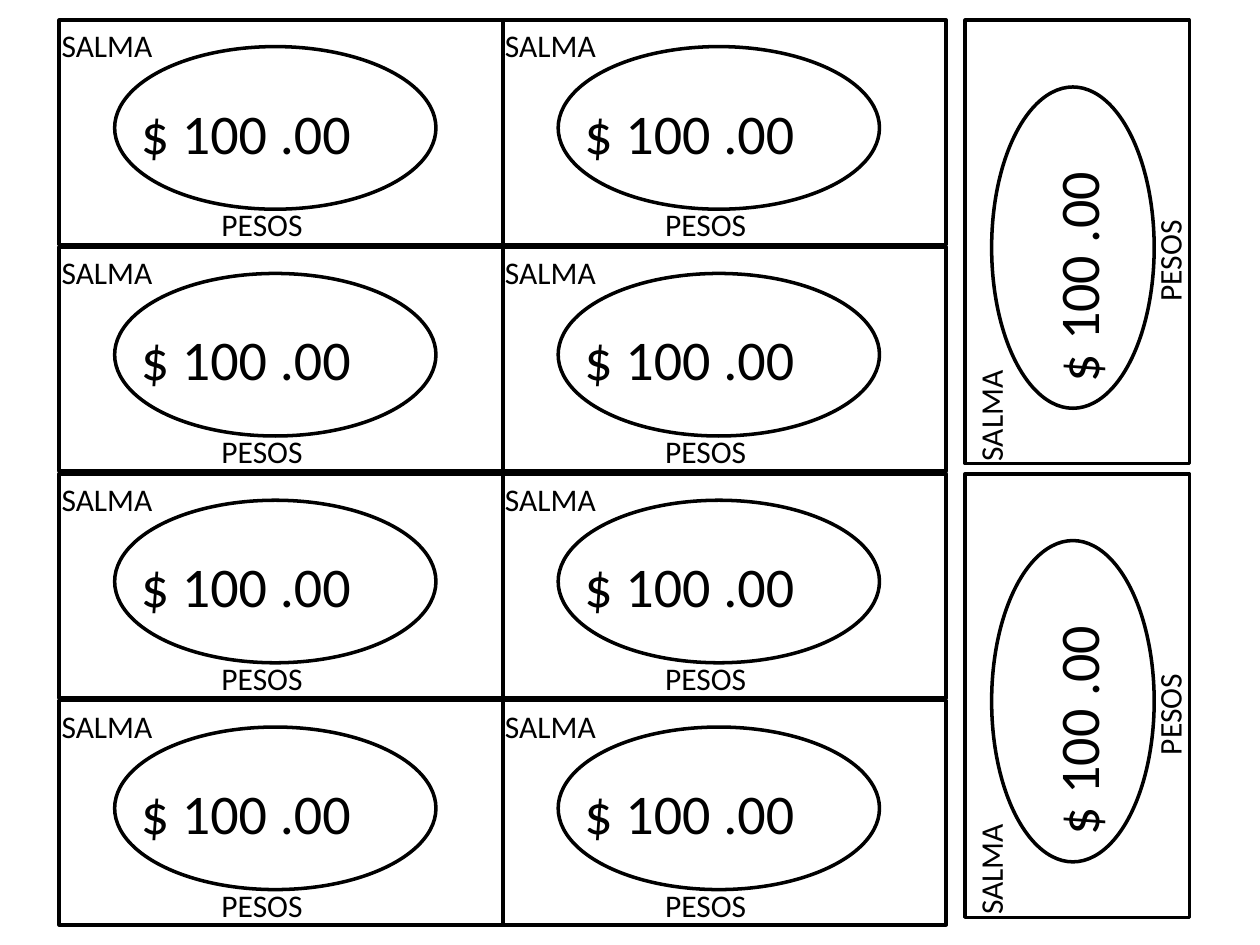
import pptx
import pptx.util
from pptx.dml.color import RGBColor
from pptx.enum.shapes import MSO_SHAPE
from pptx.enum.text import MSO_AUTO_SIZE

BLACK = "000000"
BILL_W, BILL_H = 3.52, 1.78
LEFT, TOP = 0.47, 0.16
ROW_STEP = 1.8  # bill height plus a narrow gap
SIDE_LEFT = 6.79  # left of the upright bills before turning


def color(value):
    return RGBColor.from_string(value)


def place(bill, box, turned):
    """Slide position of a box given relative to its bill, turned or not."""
    x, y = bill
    dx, dy, w, h = box
    if turned:
        # A quarter turn to the left about the centre of the bill
        off_x = dx + w / 2 - BILL_W / 2
        off_y = dy + h / 2 - BILL_H / 2
        dx = BILL_W / 2 + off_y - w / 2
        dy = BILL_H / 2 - off_x - h / 2
    return [pptx.util.Inches(v) for v in (x + dx, y + dy, w, h)]


def add_outline(shapes, kind, bill, box, turned):
    sp = shapes.add_shape(kind, *place(bill, box, turned))
    sp.rotation = 270 if turned else 0
    sp.shadow.inherit = False
    sp.fill.background()
    sp.line.color.rgb = color(BLACK)
    sp.line.width = pptx.util.Pt(2)


def add_text(shapes, text, size, bill, box, turned, wrap=False):
    sp = shapes.add_textbox(*place(bill, box, turned))
    sp.rotation = 270 if turned else 0
    tf = sp.text_frame
    tf.word_wrap = wrap
    tf.auto_size = MSO_AUTO_SIZE.SHAPE_TO_FIT_TEXT
    p = tf.paragraphs[0]
    p.text = text
    p.font.name = "Calibri"
    p.font.size = pptx.util.Pt(size)
    p.font.color.rgb = color(BLACK)


def add_bill(s, x, y, turned=False):
    shapes = s.shapes.add_group_shape().shapes
    bill = (x, y)
    add_outline(shapes, MSO_SHAPE.RECTANGLE, bill, (0, 0, BILL_W, BILL_H), turned)
    add_outline(shapes, MSO_SHAPE.OVAL, bill, (0.44, 0.21, 2.55, 1.29), turned)
    add_text(shapes, "$ 100 .00", 32, bill, (0.55, 0.57, 2.45, 0.64), turned, wrap=True)
    add_text(shapes, "PESOS", 18, bill, (1.19, 1.42, 1.06, 0.37), turned)
    add_text(shapes, "SALMA", 18, bill, (-0.08, 0, 1.14, 0.37), turned)


def main():
    prs = pptx.Presentation()
    prs.slide_width = pptx.util.Inches(10)
    prs.slide_height = pptx.util.Inches(7.5)
    s = prs.slides.add_slide(prs.slide_layouts[6])

    # Two columns of four bills
    for col in range(2):
        for row in range(4):
            add_bill(s, LEFT + col * BILL_W, TOP + row * ROW_STEP)

    # Two upright bills on the right, each two rows apart
    side_top = TOP + (BILL_W - BILL_H) / 2
    for i in range(2):
        add_bill(s, SIDE_LEFT, side_top + i * 2 * ROW_STEP, turned=True)

    prs.save("out.pptx")


if __name__ == "__main__":
    main()
